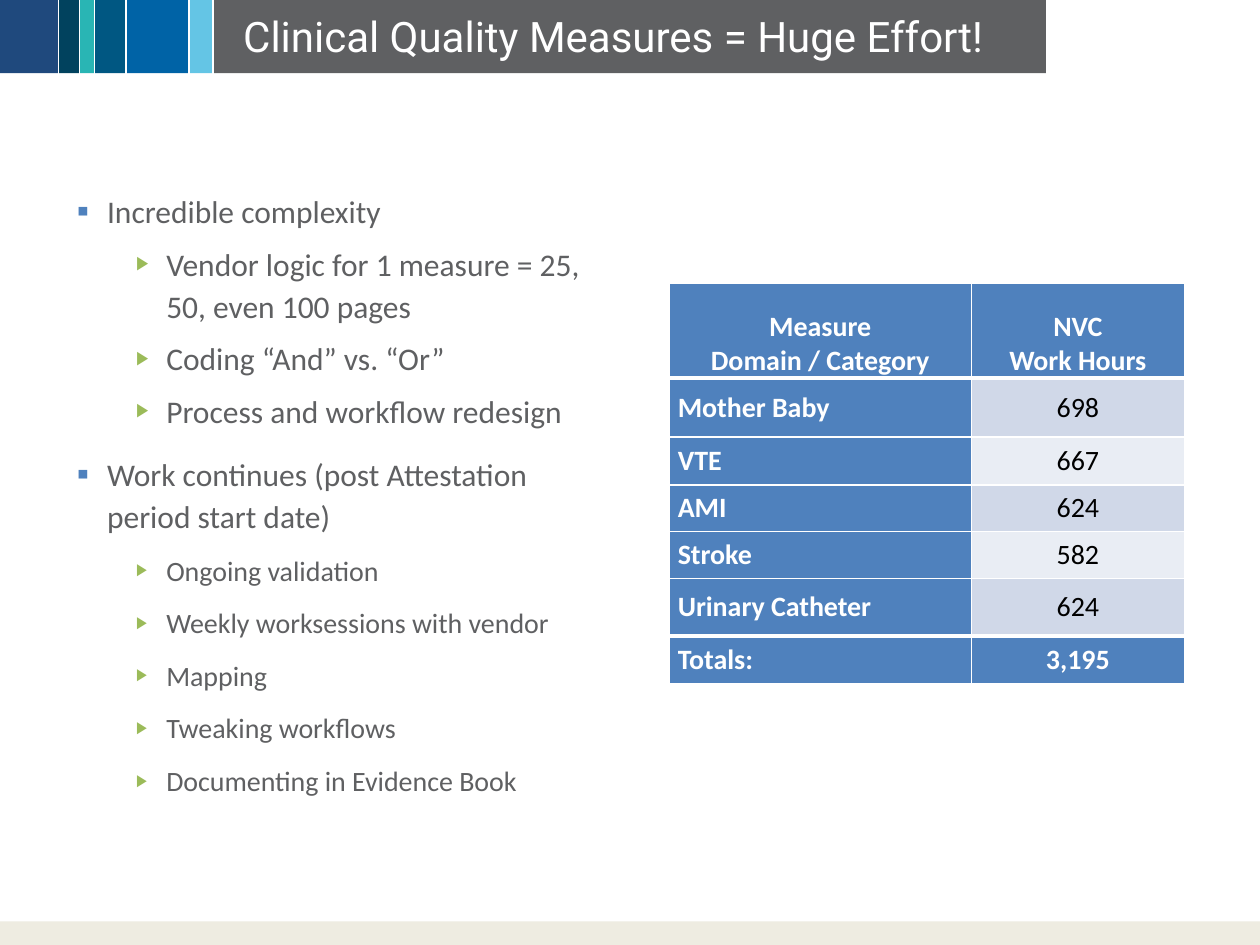
import dataclasses
import itertools

import pptx
import pptx.dml.color
import pptx.enum.shapes
import pptx.enum.text
import pptx.oxml
import pptx.oxml.ns
import pptx.util

Pt = pptx.util.Pt
Anchor = pptx.enum.text.MSO_ANCHOR
Align = pptx.enum.text.PP_ALIGN
Fit = pptx.enum.text.MSO_AUTO_SIZE

WIDTH, HEIGHT = pptx.util.Inches(10), pptx.util.Inches(7.5)
COLOURS = {
    "white": "FFFFFF", "black": "000000", "grey": "5F6062", "sand": "EEECE1",
    "navy": "1F497D", "ink": "01425E", "teal": "29B5B4", "petrol": "005782",
    "royal": "0063A6", "sky": "64C5E5", "blue": "4F81BD", "green": "9BBB59",
    "odd": "D0D8E8", "even": "E9EDF4",
}


@dataclasses.dataclass
class Area:
    """A rectangle in percent of the slide's width and height."""
    left: float
    top: float
    width: float
    height: float

    def lengths(self) -> tuple:
        return across(self.left), down(self.top), across(self.width), down(self.height)


@dataclasses.dataclass
class Stripe:
    """A banner stripe and how far down the line at its left edge runs."""
    left: float
    colour: str
    line_end: float = 0


@dataclasses.dataclass
class Level:
    bullet: str
    colour: str
    percent: int
    indent: float
    before: int


@dataclasses.dataclass
class Item:
    text: str
    level: int = 0
    size: int = 18


@dataclasses.dataclass
class Row:
    label: str
    hours: str
    height: float


BANNER_HEIGHT = 7.73
BANNER_END = 83
STRIPES = [
    Stripe(0, "navy"), Stripe(4.65, "ink", 15.5), Stripe(6.3, "teal", 21.5),
    Stripe(7.5, "petrol", 8), Stripe(10, "royal", 21.5), Stripe(15, "sky", 21.5),
    Stripe(16.9, "grey", 15.5),
]
FOOTER = Area(0, 97.5, 100, 2.5)
TITLE = Area(16.9, 0, 64.7, BANNER_HEIGHT)
BODY = Area(5.1, 19.2, 44.5, 66.4)
TABLE = Area(53.1, 30, 40.9, 42.5)
TABLE_COLUMNS = [24, 16.9]
HANGING = 0.24
LEVELS = [Level("▪", "blue", 110, 0.24, 12), Level("▶", "green", 60, 0.71, 6)]
ITEMS = [
    Item("Incredible complexity"),
    Item("Vendor logic for 1 measure = 25, 50, even 100 pages", 1),
    Item("Coding “And” vs. “Or”", 1),
    Item("Process and workflow redesign", 1),
    Item("Work continues (post Attestation period start date)"),
    Item("Ongoing validation", 1, 16),
    Item("Weekly worksessions with vendor", 1, 16),
    Item("Mapping", 1, 16),
    Item("Tweaking workflows", 1, 16),
    Item("Documenting in Evidence Book", 1, 16),
]
ROWS = [
    Row("Measure\nDomain / Category", "NVC\nWork Hours", 10),
    Row("Mother Baby", "698", 6.27),
    Row("VTE", "667", 5.07),
    Row("AMI", "624", 4.93),
    Row("Stroke", "582", 4.93),
    Row("Urinary Catheter", "624", 6.13),
    Row("Totals:", "3,195", 5.07),
]


def across(percent: float) -> int:
    return round(WIDTH * percent / 100)


def down(percent: float) -> int:
    return round(HEIGHT * percent / 100)


def colour_of(name: str):
    return pptx.dml.color.RGBColor.from_string(COLOURS[name])


def apply(target, **values) -> None:
    for name, value in values.items():
        setattr(target, name, value)


def place(shape, area: Area) -> None:
    apply(shape, **dict(zip(("left", "top", "width", "height"), area.lengths())))


def add_span(para, text: str, size: int, colour: str, font="Calibri", bold=False) -> None:
    span = para.add_run()
    span.text = text
    apply(span.font, name=font, size=Pt(size), bold=bold)
    span.font.color.rgb = colour_of(colour)


def add_xml(parent, xml: str) -> None:
    namespace = pptx.oxml.ns.nsdecls("a")
    parent.append(pptx.oxml.parse_xml(xml.replace("/>", f" {namespace}/>", 1)
                                      if xml.endswith("/>") and xml.count("<") == 1
                                      else xml.replace(">", f" {namespace}>", 1)))


def add_block(page, area: Area, colour: str) -> None:
    block = page.shapes.add_shape(pptx.enum.shapes.MSO_SHAPE.RECTANGLE, *area.lengths())
    block.shadow.inherit = False
    block.fill.solid()
    block.fill.fore_color.rgb = colour_of(colour)
    block.line.fill.background()


def add_divider(page, stripe: Stripe) -> None:
    x = across(stripe.left)
    line = page.shapes.add_connector(
        pptx.enum.shapes.MSO_CONNECTOR.STRAIGHT, x, 0, x, down(stripe.line_end))
    line.line.color.rgb = colour_of("white")
    line.line.width = Pt(1)
    add_xml(line.element.spPr, "<a:effectLst/>")


def add_banner(page) -> None:
    ends = [stripe.left for stripe in STRIPES[1:]] + [BANNER_END]
    for stripe, end in zip(STRIPES, ends):
        add_block(page, Area(stripe.left, 0, end - stripe.left, BANNER_HEIGHT), stripe.colour)
    for stripe in STRIPES[1:]:
        add_divider(page, stripe)


def write_title(page, text: str) -> None:
    title = page.shapes.title
    place(title, TITLE)
    side, edge = pptx.util.Inches(0.24), pptx.util.Inches(0.1)
    apply(title.text_frame, vertical_anchor=Anchor.BOTTOM, word_wrap=True, auto_size=Fit.NONE,
          margin_left=side, margin_right=side, margin_top=edge, margin_bottom=edge)
    para = title.text_frame.paragraphs[0]
    apply(para, alignment=Align.LEFT, line_spacing=Pt(28))
    add_span(para, text, 24, "white", "Roboto")
    page.shapes.element.append(title.element)  # in front of the banner


def write_body(page) -> None:
    box = page.placeholders[1]
    place(box, BODY)
    apply(box.text_frame, word_wrap=True, auto_size=Fit.SHAPE_TO_FIT_TEXT,
          vertical_anchor=Anchor.TOP)
    for index, item in enumerate(ITEMS):
        level = LEVELS[item.level]
        para = box.text_frame.add_paragraph() if index else box.text_frame.paragraphs[0]
        para.level = item.level
        properties = para._p.get_or_add_pPr()
        properties.set("marL", str(pptx.util.Inches(level.indent)))
        properties.set("indent", str(-pptx.util.Inches(HANGING)))
        add_xml(properties, f'<a:buClr><a:srgbClr val="{COLOURS[level.colour]}"/></a:buClr>')
        add_xml(properties, f'<a:buSzPct val="{level.percent * 1000}"/>')
        add_xml(properties, f'<a:buChar char="{level.bullet}"/>')
        apply(para, line_spacing=Pt(24), space_before=Pt(level.before if index else 0))
        add_span(para, item.text, item.size, "grey")


def set_borders(cell, top: int, bottom: int) -> None:
    for side, width in {"L": 1, "R": 1, "T": top, "B": bottom}.items():
        add_xml(cell._tc.get_or_add_tcPr(),
                f'<a:ln{side} w="{Pt(width)}"><a:solidFill>'
                f'<a:srgbClr val="{COLOURS["white"]}"/></a:solidFill></a:ln{side}>')


def add_hours_table(page) -> None:
    table = page.shapes.add_table(len(ROWS), len(TABLE_COLUMNS), *TABLE.lengths()).table
    for column, width in zip(table.columns, TABLE_COLUMNS):
        column.width = across(width)
    last = len(ROWS) - 1
    for (index, row), column in itertools.product(enumerate(ROWS), range(len(TABLE_COLUMNS))):
        table.rows[index].height = down(row.height)
        cell = table.cell(index, column)
        strong = column == 0 or index in (0, last)
        set_borders(cell, 3 if index in (1, last) else 1, 3 if index in (0, last - 1) else 1)
        cell.fill.solid()
        cell.fill.fore_color.rgb = colour_of("blue" if strong else "odd" if index % 2 else "even")
        side = pptx.util.Inches(0.07)
        apply(cell, margin_left=side, margin_right=side, margin_top=0, margin_bottom=0,
              vertical_anchor=Anchor.MIDDLE if index else Anchor.BOTTOM)
        for number, text in enumerate((row.label, row.hours)[column].split("\n")):
            para = cell.text_frame.add_paragraph() if number else cell.text_frame.paragraphs[0]
            para.alignment = Align.CENTER if column or not index else Align.LEFT
            add_span(para, text, 16, "white" if strong else "black", bold=strong)


def main() -> None:
    deck = pptx.Presentation()
    apply(deck, slide_width=WIDTH, slide_height=HEIGHT)
    page = deck.slides.add_slide(deck.slide_layouts[1])
    add_banner(page)
    add_block(page, FOOTER, "sand")
    write_title(page, "Clinical Quality Measures = Huge Effort!")
    add_hours_table(page)
    write_body(page)
    deck.save("out.pptx")


if __name__ == "__main__":
    main()
